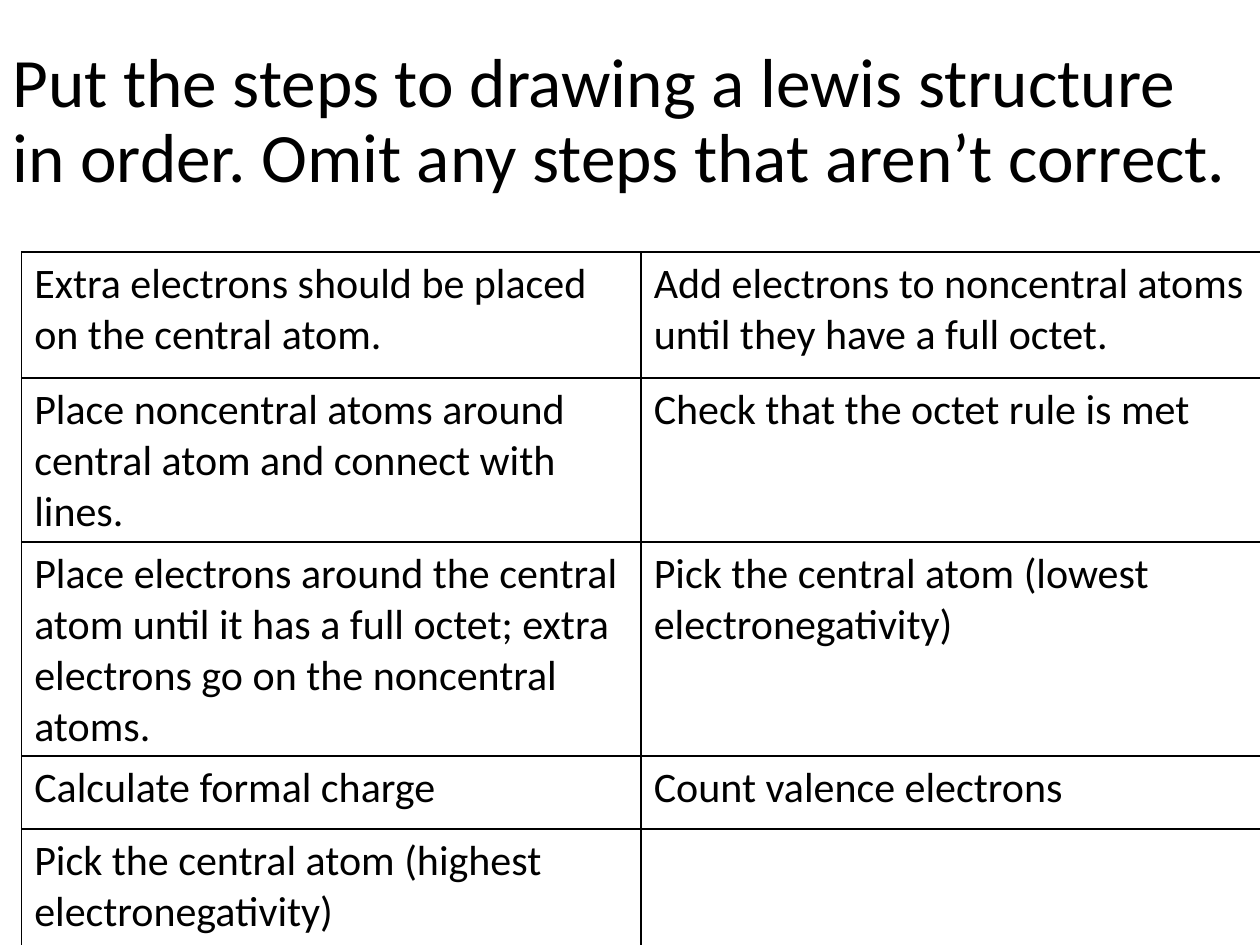
from lxml import etree
from pptx import Presentation
from pptx.dml.color import RGBColor
from pptx.enum.text import MSO_ANCHOR
from pptx.oxml.ns import qn
from pptx.util import Pt

MIDDLE = MSO_ANCHOR.MIDDLE
FONT = "Calibri"
COLORS = {"text": "000000", "border": "000000", "back": "FFFFFF"}
TITLE = ("Put the steps to drawing a lewis structure in order. "
         "Omit any steps that aren’t correct.")
STEPS = [
    ("Extra electrons should be placed on the central atom.",
     "Add electrons to noncentral atoms until they have a full octet."),
    ("Place noncentral atoms around central atom and connect with lines.",
     "Check that the octet rule is met"),
    ("Place electrons around the central atom until it has a full octet; "
     "extra electrons go on the noncentral atoms.",
     "Pick the central atom (lowest electronegativity)"),
    ("Calculate formal charge", "Count valence electrons"),
    ("Pick the central atom (highest electronegativity)", ""),
]
HEIGHTS = [72, 72, 103, 41.8, 72]
COL = 354


def style(para, size):
    """Set the font of a paragraph."""
    para.font.name = FONT
    para.font.size = Pt(size)
    para.font.color.rgb = RGBColor.from_string(COLORS["text"])


def add_title(slide):
    """Add the title at the top of the slide."""
    box = slide.shapes.add_textbox(Pt(0), Pt(7.2), Pt(712), Pt(126))
    frame = box.text_frame
    frame.word_wrap = True
    frame.vertical_anchor = MIDDLE
    para = frame.paragraphs[0]
    para.text = TITLE
    para.line_spacing = 0.9
    style(para, 39.6)


def add_border(cell):
    """Draw a thin line on each side of a cell."""
    props = cell._tc.get_or_add_tcPr()
    for side in ("lnL", "lnR", "lnT", "lnB"):
        line = etree.SubElement(props, qn(f"a:{side}"), w=str(Pt(1)))
        fill = etree.SubElement(line, qn("a:solidFill"))
        etree.SubElement(fill, qn("a:srgbClr"), val=COLORS["border"])


def add_steps(slide):
    """Add the table of steps."""
    frame = slide.shapes.add_table(len(STEPS), 2, Pt(12.4), Pt(144),
                                   Pt(2 * COL), Pt(sum(HEIGHTS)))
    table = frame.table
    table.first_row = False
    table.horz_banding = False
    for col in table.columns:
        col.width = Pt(COL)
    for row, height, texts in zip(table.rows, HEIGHTS, STEPS):
        row.height = Pt(height)
        for cell, text in zip(row.cells, texts):
            cell.text = text
            style(cell.text_frame.paragraphs[0], 24)
            add_border(cell)
            cell.fill.background()


def main():
    """Build and save the slide."""
    deck = Presentation()
    deck.slide_width, deck.slide_height = Pt(720), Pt(540)
    slide = deck.slides.add_slide(deck.slide_layouts[6])
    back = slide.background.fill
    back.solid()
    back.fore_color.rgb = RGBColor.from_string(COLORS["back"])
    add_title(slide)
    add_steps(slide)
    deck.save("out.pptx")


if __name__ == "__main__":
    main()
